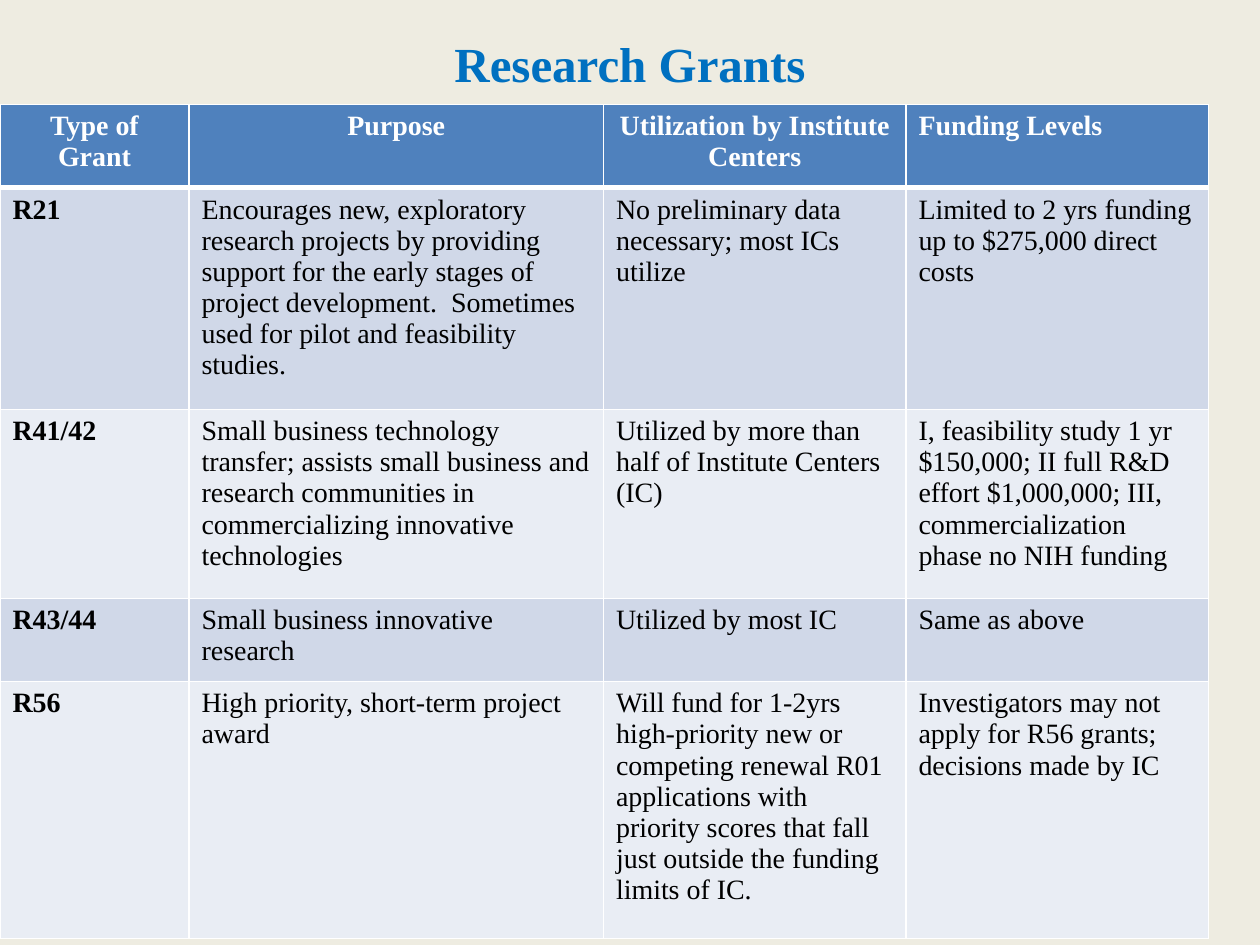
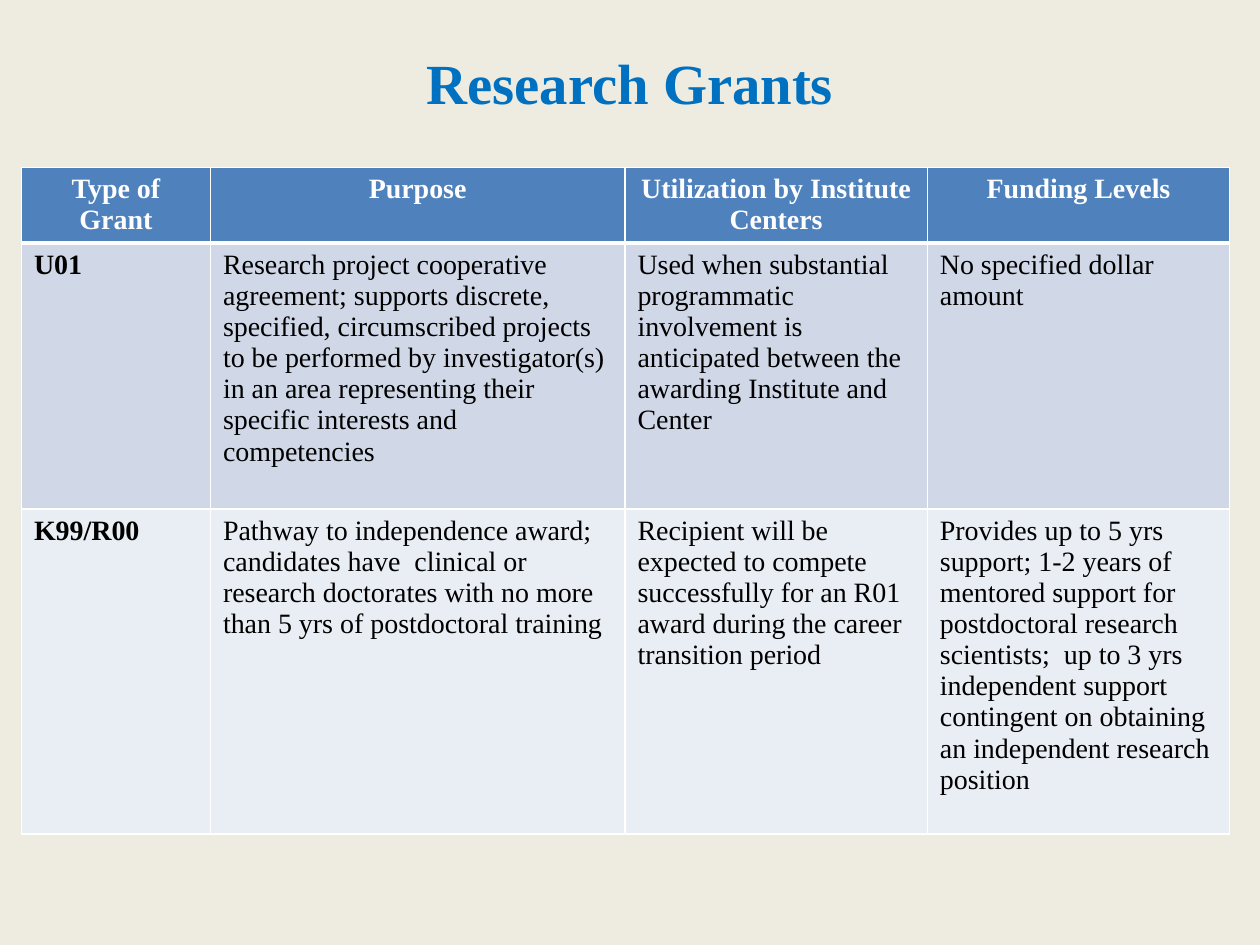
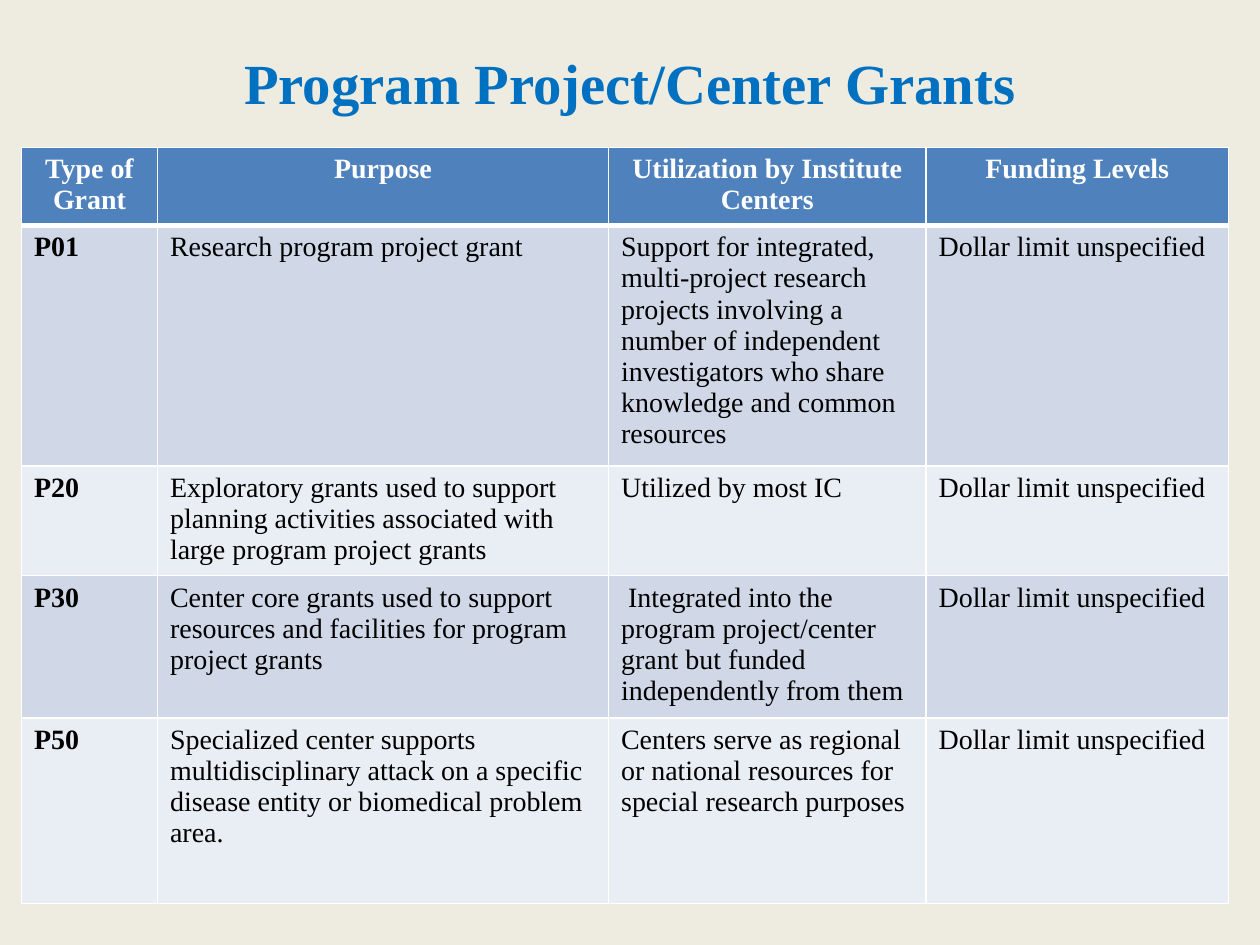
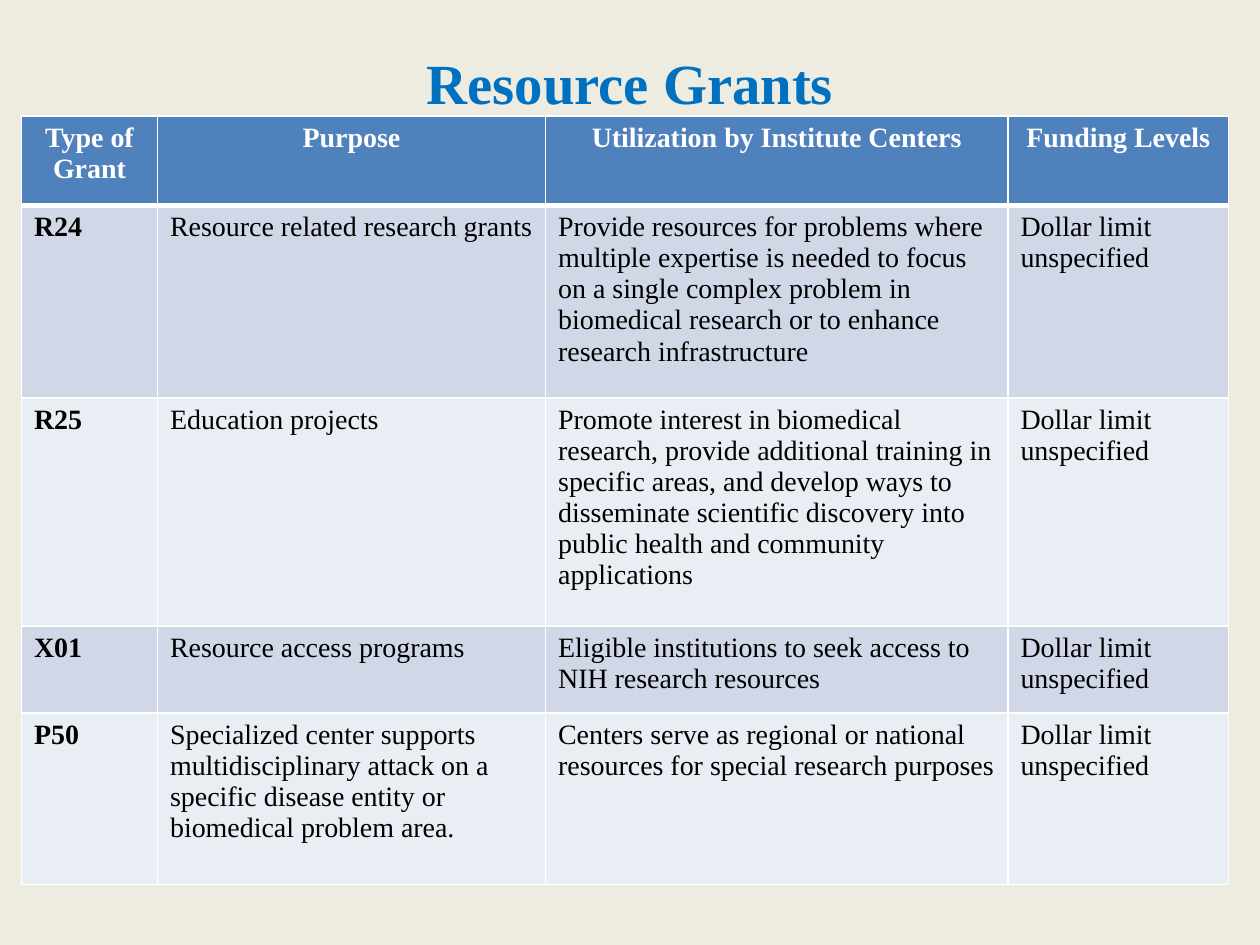
from lxml import etree
from pptx import Presentation
from pptx.dml.color import RGBColor
from pptx.enum.text import MSO_ANCHOR, MSO_AUTO_SIZE, PP_ALIGN
from pptx.oxml.ns import qn
from pptx.util import Inches, Pt

CENTER, LEFT = PP_ALIGN.CENTER, PP_ALIGN.LEFT
MIDDLE, NO_FIT = MSO_ANCHOR.MIDDLE, MSO_AUTO_SIZE.NONE
TITLE_ONLY = 5

FONT = "Times New Roman"
BACKGROUND, TITLE_BLUE = "EEECE1", "0070C0"
HEADER_FILL, BAND_FILLS = "4F81BD", ("D0D8E8", "E9EDF4")
WHITE, BLACK = "FFFFFF", "000000"
CELL_SIZE = 16

HEADERS = ("Type of Grant", "Purpose", "Utilization by Institute Centers", "Funding Levels")
NO_LIMIT = "Dollar limit unspecified"
P50 = (
    "P50",
    "Specialized center supports multidisciplinary attack on a specific disease entity "
    "or biomedical problem area.",
    "Centers serve as regional or national resources for special research purposes",
    NO_LIMIT,
)
HIGH_TITLE = {"top": 0, "height": 1, "size": 28}
LOW_TITLE = {"top": 0.3, "height": 0.7, "size": 32.4}

PAGES = [
    {
        "title": "Research Grants", "title_style": HIGH_TITLE, "last_header": LEFT,
        "corner": (0, 0.83),
        "columns": (1.5, 3.29, 2.4, 2.4),
        "heights": (0.66, 1.76, 1.5, 0.66, 2.04),
        "grants": [
            ("R21",
             "Encourages new, exploratory research projects by providing support for the early "
             "stages of project development.  Sometimes used for pilot and feasibility studies.",
             "No preliminary data necessary; most ICs utilize",
             "Limited to 2 yrs funding up to $275,000 direct costs"),
            ("R41/42",
             "Small business technology transfer; assists small business and research "
             "communities in commercializing innovative technologies",
             "Utilized by more than half of Institute Centers (IC)",
             "I, feasibility study 1 yr $150,000; II full R&D effort $1,000,000; III, "
             "commercialization phase no NIH funding"),
            ("R43/44",
             "Small business innovative research",
             "Utilized by most IC",
             "Same as above"),
            ("R56",
             "High priority, short-term project award",
             "Will fund for 1-2yrs high-priority new or competing renewal R01 applications "
             "with priority scores that fall just outside the funding limits of IC.",
             "Investigators may not apply for R56 grants; decisions made by IC"),
        ],
    },
    {
        "title": "Research Grants", "title_style": LOW_TITLE, "last_header": CENTER,
        "corner": (0.17, 1.33),
        "columns": (1.5, 3.29, 2.4, 2.4),
        "heights": (0.6, 2.11, 2.58),
        "grants": [
            ("U01",
             "Research project cooperative agreement; supports discrete, specified, "
             "circumscribed projects to be performed by investigator(s) in an area "
             "representing their specific interests and competencies",
             "Used when substantial programmatic involvement is anticipated between the "
             "awarding Institute and Center",
             "No specified dollar amount"),
            ("K99/R00",
             "Pathway to independence award; candidates have  clinical or research doctorates "
             "with no more than 5 yrs of postdoctoral training",
             "Recipient will be expected to compete successfully for an R01 award during the "
             "career transition period",
             "Provides up to 5 yrs support; 1-2 years of mentored support for postdoctoral "
             "research scientists;  up to 3 yrs independent support contingent on obtaining "
             "an independent research position"),
        ],
    },
    {
        "title": "Program Project/Center Grants", "title_style": LOW_TITLE, "last_header": CENTER,
        "corner": (0.17, 1.17),
        "columns": (1.08, 3.58, 2.52, 2.4),
        "heights": (0.62, 1.91, 0.87, 1.13, 1.47),
        "grants": [
            ("P01",
             "Research program project grant",
             "Support for integrated, multi-project research projects involving a number of "
             "independent investigators who share knowledge and common resources",
             NO_LIMIT),
            ("P20",
             "Exploratory grants used to support planning activities associated with large "
             "program project grants",
             "Utilized by most IC",
             NO_LIMIT),
            ("P30",
             "Center core grants used to support resources and facilities for program "
             "project grants",
             " Integrated into the program project/center grant but funded independently "
             "from them",
             NO_LIMIT),
            P50,
        ],
    },
    {
        "title": "Resource Grants", "title_style": LOW_TITLE, "last_header": CENTER,
        "corner": (0.17, 0.92),
        "columns": (1.08, 3.08, 3.67, 1.75),
        "heights": (0.71, 1.53, 1.81, 0.69, 1.36),
        "grants": [
            ("R24",
             "Resource related research grants",
             "Provide resources for problems where multiple expertise is needed to focus on a "
             "single complex problem in biomedical research or to enhance research "
             "infrastructure",
             NO_LIMIT),
            ("R25",
             "Education projects",
             "Promote interest in biomedical research, provide additional training in "
             "specific areas, and develop ways to disseminate scientific discovery into "
             "public health and community applications",
             NO_LIMIT),
            ("X01",
             "Resource access programs",
             "Eligible institutions to seek access to NIH research resources",
             NO_LIMIT),
            P50,
        ],
    },
]


def rgb(color):
    return RGBColor.from_string(color)


def format_paragraph(para, size, color, bold, align):
    para.alignment = align
    font = para.font
    font.name, font.size, font.bold = FONT, Pt(size), bold
    font.color.rgb = rgb(color)


def add_title(page, text, top, height, size):
    title = page.shapes.title
    title.left, title.top = Inches(0.5), Inches(top)
    title.width, title.height = Inches(9), Inches(height)
    frame = title.text_frame
    frame.text = text
    frame.auto_size, frame.vertical_anchor = NO_FIT, MIDDLE
    format_paragraph(frame.paragraphs[0], size, TITLE_BLUE, True, CENTER)


def add_borders(cell, bottom_width):
    """Draw white cell edges; call before filling, since lines precede the fill in XML."""
    properties = cell._tc.get_or_add_tcPr()
    for side, width in (("L", 1), ("R", 1), ("T", 1), ("B", bottom_width)):
        line = etree.SubElement(properties, qn(f"a:ln{side}"), w=str(Pt(width)))
        fill = etree.SubElement(line, qn("a:solidFill"))
        etree.SubElement(fill, qn("a:srgbClr"), val=WHITE)


def fill_cell(cell, text, fill, color, bold, align, bottom_width=1):
    add_borders(cell, bottom_width)
    cell.fill.solid()
    cell.fill.fore_color.rgb = rgb(fill)
    cell.text = text
    format_paragraph(cell.text_frame.paragraphs[0], CELL_SIZE, color, bold, align)


def add_grant_table(page, corner, columns, heights, grants, last_header):
    left, top = corner
    frame = page.shapes.add_table(
        len(heights), len(columns), Inches(left), Inches(top),
        Inches(sum(columns)), Inches(sum(heights)))
    table = frame.table
    for column, width in zip(table.columns, columns):
        column.width = Inches(width)
    for row, height in zip(table.rows, heights):
        row.height = Inches(height)

    header_aligns = (CENTER, CENTER, CENTER, last_header)
    for index, (header, align) in enumerate(zip(HEADERS, header_aligns)):
        fill_cell(table.cell(0, index), header, HEADER_FILL, WHITE, True, align, bottom_width=3)
    for row_index, grant in enumerate(grants):
        band = BAND_FILLS[row_index % 2]
        for index, text in enumerate(grant):
            fill_cell(table.cell(row_index + 1, index), text, band, BLACK, index == 0, LEFT)


def main():
    deck = Presentation()
    deck.slide_width, deck.slide_height = Inches(10), Inches(7.5)
    background = deck.slide_master.background.fill
    background.solid()
    background.fore_color.rgb = rgb(BACKGROUND)
    for content in PAGES:
        page = deck.slides.add_slide(deck.slide_layouts[TITLE_ONLY])
        add_title(page, content["title"], **content["title_style"])
        add_grant_table(page, content["corner"], content["columns"], content["heights"],
                        content["grants"], content["last_header"])
    deck.save("out.pptx")


if __name__ == "__main__":
    main()
